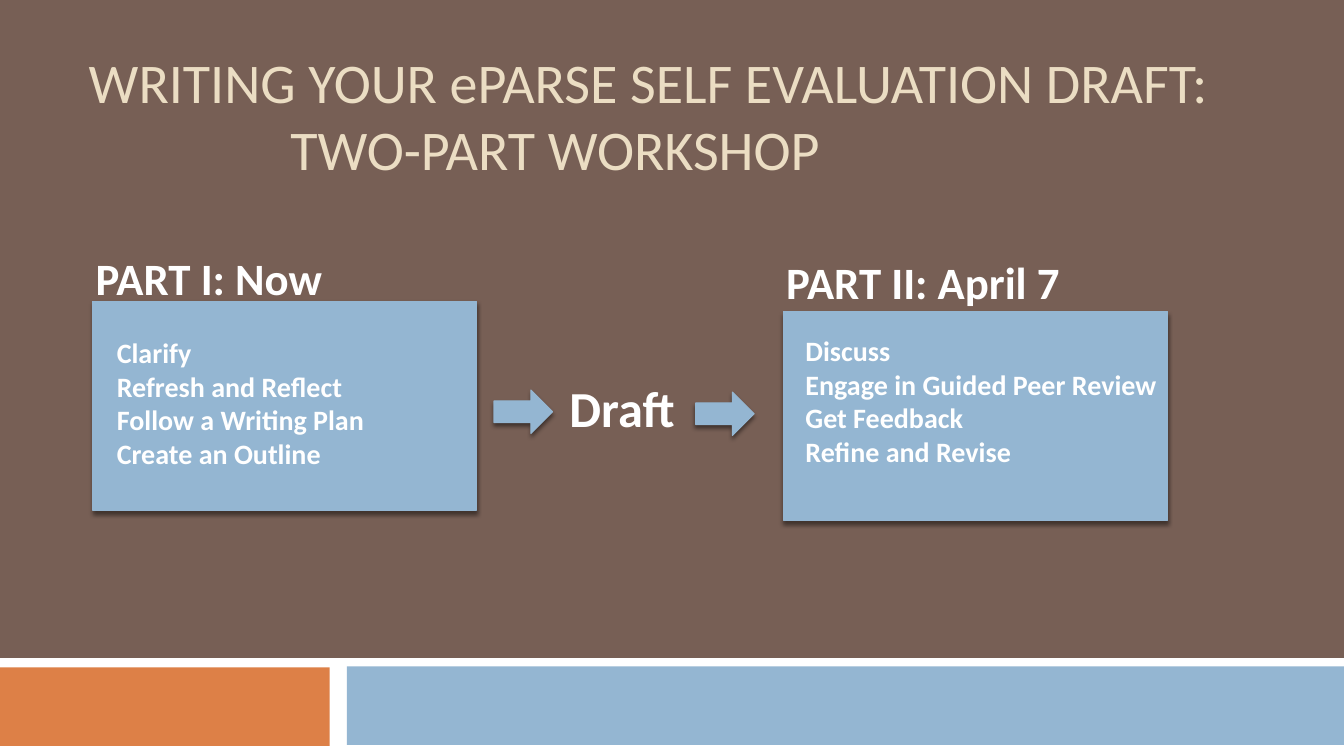
from dataclasses import dataclass

from lxml.etree import SubElement
from pptx import Presentation
from pptx.dml.color import RGBColor
from pptx.enum.shapes import MSO_SHAPE
from pptx.enum.text import MSO_ANCHOR, MSO_AUTO_SIZE, PP_ALIGN
from pptx.oxml.ns import qn
from pptx.shapes.autoshape import Shape
from pptx.slide import Slide
from pptx.text.text import TextFrame
from pptx.util import Inches, Pt

HUES = {
    "brown": "775F55",
    "cream": "EBDDC3",
    "blue": "94B6D2",
    "orange": "DD8047",
    "white": "FFFFFF",
    "black": "000000",
}
FRAME = {"word_wrap": True, "auto_size": MSO_AUTO_SIZE.NONE}
HEAD = {"vertical_anchor": MSO_ANCHOR.BOTTOM}


@dataclass
class Block:
    left: float
    top: float
    width: float
    height: float
    hue: str = "blue"
    kind: MSO_SHAPE = MSO_SHAPE.RECTANGLE
    raised: bool = True


@dataclass
class Label:
    left: float
    top: float
    width: float
    height: float
    size: int
    lines: tuple[str, ...]


BLOCKS = (
    Block(0, 6.53, 13.33, 0.97, "white", raised=False),
    Block(0, 6.62, 3.27, 0.78, "orange", raised=False),
    Block(3.44, 6.61, 9.89, 0.78, raised=False),
    Block(0.92, 2.99, 3.81, 2.07),
    Block(7.77, 3.09, 3.81, 2.07),
    Block(4.9, 3.87, 0.58, 0.43, kind=MSO_SHAPE.RIGHT_ARROW),
    Block(6.9, 3.89, 0.58, 0.43, kind=MSO_SHAPE.RIGHT_ARROW),
)
LABELS = (
    Label(0.85, 2.44, 3.88, 0.64, 32, ("PART I: Now",)),
    Label(1.06, 3.28, 3.88, 1.46, 20,
          ("Clarify", "Refresh and Reflect", "Follow a Writing Plan", "Create an Outline")),
    Label(5.55, 3.69, 1.3, 0.71, 36, ("Draft",)),
    Label(7.7, 2.48, 4.53, 0.64, 32, ("PART II: April 7",)),
    Label(7.89, 3.26, 3.93, 1.46, 20,
          ("Discuss", "Engage in Guided Peer Review", "Get Feedback", "Refine and Revise")),
)
TITLE = Label(0.78, 0.48, 12.4, 1.37, 40,
              ("WRITING YOUR ePARSE SELF EVALUATION DRAFT:", "TWO-PART WORKSHOP"))


def tint(name: str) -> RGBColor:
    return RGBColor.from_string(HUES[name])


def apply(target: object, form: dict) -> None:
    for name, value in form.items():
        setattr(target, name, value)


def area(item: Block | Label) -> tuple:
    return tuple(Inches(n) for n in (item.left, item.top, item.width, item.height))


def shade(shape: Shape) -> None:
    glow = SubElement(
        shape.element.spPr.find(qn("a:effectLst")), qn("a:outerShdw"),
        blurRad=str(Pt(3)), dist=str(Pt(2.4)), dir="5400000", rotWithShape="0",
    )
    color = SubElement(glow, qn("a:srgbClr"), val=HUES["black"])
    SubElement(color, qn("a:alpha"), val="45000")


def draw(slide: Slide, block: Block) -> None:
    shape = slide.shapes.add_shape(block.kind, *area(block))
    shape.shadow.inherit = False
    shape.fill.solid()
    shape.fill.fore_color.rgb = tint(block.hue)
    if block.raised:
        shape.line.color.rgb = tint(block.hue)
        shape.line.width = Pt(0.79)
        shade(shape)
    else:
        shape.line.fill.background()


def write(frame: TextFrame, label: Label, hue: str, bold: bool) -> None:
    apply(frame, FRAME)
    frame.text = "\n".join(label.lines)
    for para in frame.paragraphs:
        para.alignment = PP_ALIGN.LEFT
        font = para.runs[0].font
        apply(font, {"name": "Calibri", "size": Pt(label.size), "bold": bold})
        font.color.rgb = tint(hue)


def head(slide: Slide) -> None:
    title = slide.shapes.title
    apply(title, dict(zip(("left", "top", "width", "height"), area(TITLE))))
    write(title.text_frame, TITLE, "cream", False)
    apply(title.text_frame, HEAD)
    second = title.text_frame.paragraphs[1]
    second._p.get_or_add_pPr().set("marL", str(Inches(2)))


def main() -> None:
    deck = Presentation()
    apply(deck, {"slide_width": Inches(13.33), "slide_height": Inches(7.5)})
    slide = deck.slides.add_slide(deck.slide_layouts[5])
    slide.background.fill.solid()
    slide.background.fill.fore_color.rgb = tint("brown")
    head(slide)
    for block in BLOCKS:
        draw(slide, block)
    for label in LABELS:
        box = slide.shapes.add_textbox(*area(label))
        write(box.text_frame, label, "white", True)
    deck.save("out.pptx")


if __name__ == "__main__":
    main()
